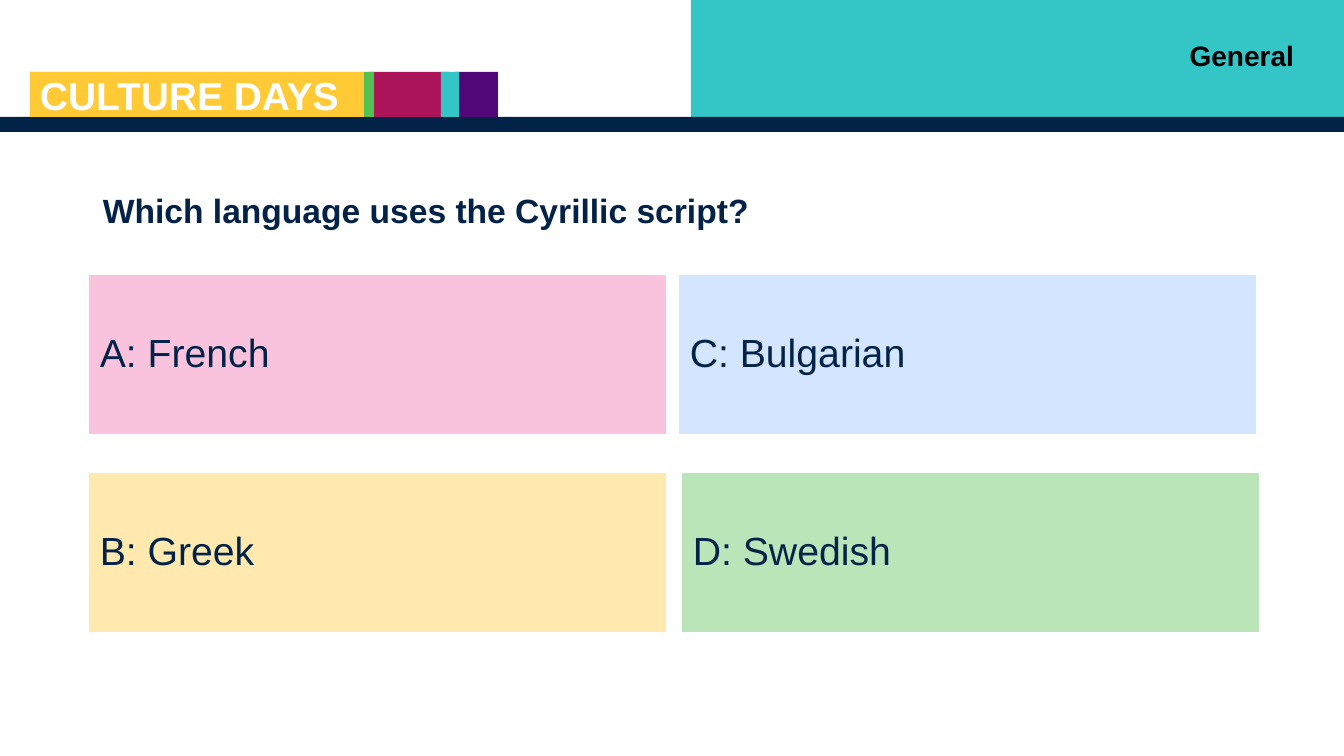
from dataclasses import dataclass

from pptx import Presentation
from pptx.dml.color import RGBColor
from pptx.enum.shapes import MSO_SHAPE as Shape
from pptx.enum.text import MSO_ANCHOR as Anchor, PP_ALIGN as Align
from pptx.util import Emu, Pt

SLIDE_W, SLIDE_H = 1344, 756
EMU_PER_PX = 12192000 / SLIDE_W


@dataclass(frozen=True)
class Theme:
    font: str = "Arial"
    navy: str = "032248"
    teal: str = "34C6C6"
    purple: str = "500778"
    crimson: str = "AC145A"
    green: str = "52C152"
    yellow: str = "FFCA36"
    white: str = "FFFFFF"
    black: str = "000000"
    pale_pink: str = "F9C3DD"
    pale_blue: str = "D3E5FF"
    pale_yellow: str = "FFE9AE"
    pale_green: str = "B9E5B9"
    brand_size: float = 27.8
    question_size: int = 24
    answer_size: int = 28
    category_size: int = 20


THEME = Theme()


def px(length):
    return Emu(round(length * EMU_PER_PX))


def add_block(slide, box, color, outlined=False):
    block = slide.shapes.add_shape(Shape.RECTANGLE, *map(px, box))
    block.shadow.inherit = False
    block.fill.solid()
    block.fill.fore_color.rgb = RGBColor.from_string(color)
    if outlined:
        block.line.color.rgb = RGBColor.from_string(color)
        block.line.width = Pt(0.75)
    else:
        block.line.fill.background()
    return block


def write(holder, text, size, color, bold=False, align=Align.LEFT,
          anchor=Anchor.MIDDLE, spacing=0.9):
    frame = holder.text_frame
    frame.word_wrap = True
    frame.vertical_anchor = anchor
    paragraph = frame.paragraphs[0]
    paragraph.alignment = align
    paragraph.line_spacing = spacing
    run = paragraph.add_run()
    run.text = text
    run.font.name = THEME.font
    run.font.size = Pt(size)
    run.font.bold = bold
    run.font.color.rgb = RGBColor.from_string(color)


def add_label(slide, box, text, size, color, **style):
    label = slide.shapes.add_textbox(*map(px, box))
    write(label, text, size, color, bold=True, **style)


def add_answer(slide, left, top, text, color):
    card = add_block(slide, (left, top, 576, 158), color, outlined=True)
    write(card, text, THEME.answer_size, THEME.navy)


def add_header(slide):
    add_block(slide, (691, 0, 653, 117), THEME.teal)
    add_block(slide, (0, 117, SLIDE_W, 15), THEME.navy)
    # Colour strip, from back to front
    for left, width, color in (
        (455, 43, THEME.purple),
        (369, 80, THEME.crimson),
        (441, 18, THEME.teal),
        (364, 10, THEME.green),
        (30, 334, THEME.yellow),
    ):
        add_block(slide, (left, 72, width, 45), color)
    add_label(slide, (30, 76, 418, 48), "CULTURE DAYS", THEME.brand_size,
              THEME.white, anchor=Anchor.TOP, spacing=0.8)


def main():
    deck = Presentation()
    deck.slide_width, deck.slide_height = px(SLIDE_W), px(SLIDE_H)
    slide = deck.slides.add_slide(deck.slide_layouts[6])

    add_header(slide)

    # Question
    add_label(slide, (93, 167, 1159, 91),
              "Which language uses the Cyrillic script?",
              THEME.question_size, THEME.navy)

    # Answers
    for left, top, text, color in (
        (90, 276, "A: French", THEME.pale_pink),
        (680, 276, "C: Bulgarian", THEME.pale_blue),
        (90, 474, "B: Greek", THEME.pale_yellow),
        (683, 474, "D: Swedish", THEME.pale_green),
    ):
        add_answer(slide, left, top, text, color)

    # Category
    add_label(slide, (767, 34, 537, 44), "General", THEME.category_size,
              THEME.black, align=Align.RIGHT, anchor=Anchor.TOP, spacing=1.0)

    deck.save("out.pptx")


if __name__ == "__main__":
    main()
